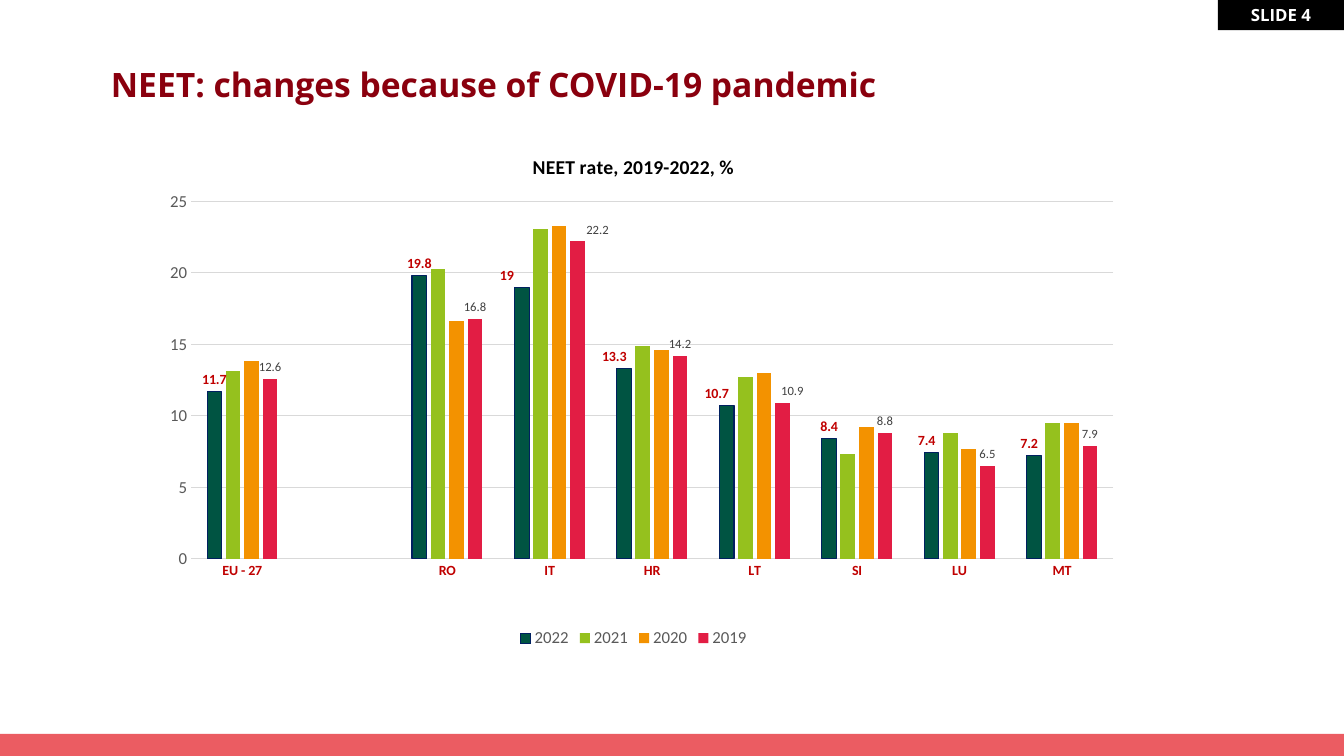
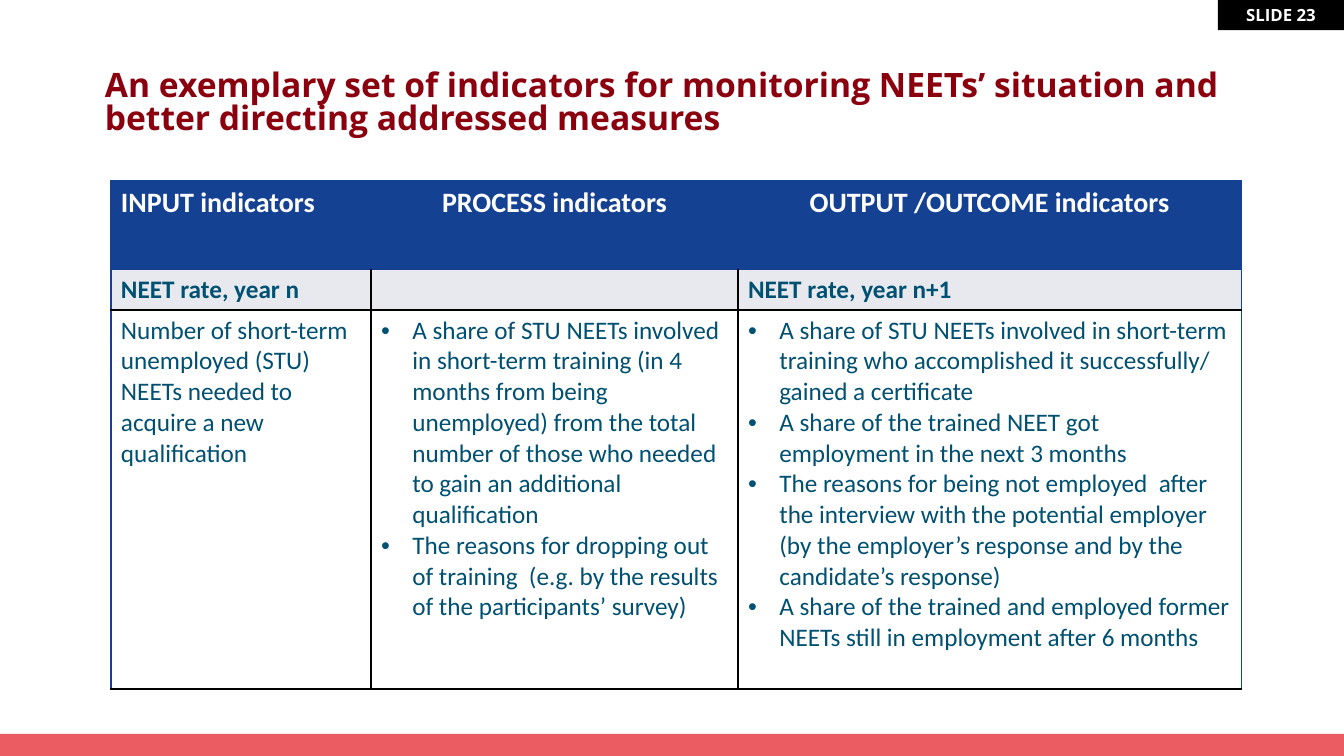
import dataclasses
import typing

import lxml.etree
import pptx
import pptx.chart.data
import pptx.dml.color
import pptx.enum.chart
import pptx.enum.shapes
import pptx.enum.text
import pptx.oxml.ns
import pptx.util

Inches = pptx.util.Inches
qn = pptx.oxml.ns.qn
Align = pptx.enum.text.PP_ALIGN


@dataclasses.dataclass(frozen=True)
class Theme:
    head: str = "Open Sans"
    body: str = "Calibri"
    white: str = "FFFFFF"
    black: str = "000000"
    band: str = "EB5C62"
    title: str = "8A000E"
    blue: str = "154193"
    pale: str = "E8E9EE"
    text: str = "005072"
    red: str = "C00000"
    grid: str = "D9D9D9"
    grey: str = "595959"
    dark: str = "404040"
    navy: str = "002060"
    big: int = 24
    header: int = 20
    cell: int = 18
    chart: int = 14
    small: int = 12
    label: int = 10
    tiny: int = 9


THEME = Theme()


@dataclasses.dataclass(frozen=True)
class Head:
    text: str
    number: int
    left: float
    top: float
    height: float
    space: float


@dataclasses.dataclass(frozen=True)
class Tag:
    size: int
    color: str
    bold: bool
    shifts: dict[int, float]


@dataclasses.dataclass(frozen=True)
class Series:
    name: str
    color: str
    values: tuple[float | None, ...]
    edge: str | None = None
    tag: Tag | None = None


@dataclasses.dataclass(frozen=True)
class Row:
    height: float
    fill: str
    color: str
    size: int
    bold: bool
    cells: tuple[tuple[str, ...], ...]
    aligns: tuple[typing.Any, ...] = (Align.LEFT,) * 3


CATS = ("EU - 27", "", "RO", "IT", "HR", "LT", "SI", "LU", "MT")
SERIES = (
    Series("2022", "005442", (11.7, None, 19.8, 19, 13.3, 10.7, 8.4, 7.4, 7.2), THEME.navy,
           Tag(THEME.label, THEME.red, True,
               {3: -0.015, 4: -0.01, 5: -0.01, 7: -0.005, 8: -0.005})),
    Series("2021", "95C11E", (13.1, None, 20.3, 23.1, 14.9, 12.7, 7.3, 8.8, 9.5)),
    Series("2020", "F39200", (13.8, None, 16.6, 23.3, 14.6, 13, 9.2, 7.7, 9.5)),
    Series("2019", "E21D44", (12.6, None, 16.8, 22.2, 14.2, 10.9, 8.8, 6.5, 7.9), None,
           Tag(THEME.tiny, THEME.dark, False, {3: 0.02, 5: 0.01})),
)

WIDTHS = (2.58, 3.64, 4.99)
ROWS = (
    Row(0.88, THEME.blue, THEME.white, THEME.header, True,
        (("INPUT indicators",), ("PROCESS indicators",), ("OUTPUT /OUTCOME indicators",)),
        (Align.LEFT, Align.CENTER, Align.CENTER)),
    Row(0.4, THEME.pale, THEME.text, THEME.cell, True,
        (("NEET rate, year n",), (), ("NEET rate, year n+1",))),
    Row(3.76, THEME.white, THEME.text, THEME.cell, False, (
        ("Number of short-term unemployed (STU) NEETs needed to acquire a new qualification",),
        ("A share of STU NEETs involved in short-term training (in 4 months from being "
         "unemployed) from the total number of those who needed to gain an additional "
         "qualification",
         "The reasons for dropping out of training  (e.g. by the results of the "
         "participants’ survey)"),
        ("A share of STU NEETs involved in short-term training who accomplished it "
         "successfully/ gained a certificate",
         "A share of the trained NEET got employment in the next 3 months",
         "The reasons for being not employed  after the interview with the potential "
         "employer (by the employer’s response and by the candidate’s response)",
         "A share of the trained and employed former NEETs still in employment after "
         "6 months"))),
)


def rgb(color: str) -> pptx.dml.color.RGBColor:
    return pptx.dml.color.RGBColor.from_string(color)


def style(font: typing.Any, size: int, color: str, bold: bool = False,
          face: str = THEME.body) -> None:
    font.name = face
    font.size = pptx.util.Pt(size)
    font.bold = bold
    font.color.rgb = rgb(color)


def box(slide: typing.Any, left: float, top: float, width: float, height: float,
        color: str) -> typing.Any:
    shape = slide.shapes.add_shape(pptx.enum.shapes.MSO_SHAPE.RECTANGLE, Inches(left),
                                   Inches(top), Inches(width), Inches(height))
    shape.shadow.inherit = False
    shape.fill.solid()
    shape.fill.fore_color.rgb = rgb(color)
    shape.line.fill.background()
    return shape


def add_page(deck: typing.Any, head: Head) -> typing.Any:
    slide = deck.slides.add_slide(deck.slide_layouts[5])
    box(slide, 0, 7.28, 13.33, 0.22, THEME.band)
    badge = box(slide, 12.08, 0, 1.25, 0.3, THEME.black)
    frame = badge.text_frame
    frame.margin_top = frame.margin_bottom = 0
    frame.vertical_anchor = pptx.enum.text.MSO_ANCHOR.MIDDLE
    frame.text = f"SLIDE {head.number}"
    frame.paragraphs[0].alignment = Align.CENTER
    style(frame.paragraphs[0].runs[0].font, THEME.small, THEME.white, True, THEME.head)

    title = slide.shapes.title
    title.left, title.top = Inches(head.left), Inches(head.top)
    title.width, title.height = Inches(11.51), Inches(head.height)
    frame = title.text_frame
    frame.text = head.text
    frame.word_wrap = True
    frame.auto_size = pptx.enum.text.MSO_AUTO_SIZE.NONE
    frame.vertical_anchor = pptx.enum.text.MSO_ANCHOR.TOP
    line = frame.paragraphs[0]
    line.alignment = Align.LEFT
    line.line_spacing = head.space
    style(line.runs[0].font, THEME.big, THEME.title, True, THEME.head)
    return slide


def place(parent: typing.Any, index: int, **parts: typing.Any) -> None:
    for old in parent.findall(qn("c:layout")):
        parent.remove(old)
    layout = lxml.etree.Element(qn("c:layout"))
    manual = lxml.etree.SubElement(layout, qn("c:manualLayout"))
    for name, value in parts.items():
        lxml.etree.SubElement(manual, qn(f"c:{name}"), val=str(value))
    parent.insert(index, layout)


def add_tags(series: typing.Any, tag: Tag) -> None:
    spot = pptx.enum.chart.XL_LABEL_POSITION.OUTSIDE_END
    labels = series.data_labels
    labels.show_value = True
    labels.position = spot
    style(labels.font, tag.size, tag.color, tag.bold)
    for index in tag.shifts:
        label = series.points[index].data_label
        label.position = spot
        style(label.font, tag.size, tag.color, tag.bold)
    for item in series._element.iter(qn("c:dLbl")):
        index = int(item.find(qn("c:idx")).get("val"))
        place(item, 1, x=tag.shifts[index], y=0)


def add_rates(slide: typing.Any) -> None:
    data = pptx.chart.data.CategoryChartData()
    data.categories = CATS
    for item in SERIES:
        data.add_series(item.name, item.values)
    chart = slide.shapes.add_chart(
        pptx.enum.chart.XL_CHART_TYPE.COLUMN_CLUSTERED,
        Inches(1.33), Inches(1.33), Inches(9.91), Inches(5.14), data).chart
    style(chart.font, THEME.label, THEME.black)

    chart.has_title = True
    frame = chart.chart_title.text_frame
    frame.text = "NEET rate, 2019-2022, %"
    style(frame.paragraphs[0].runs[0].font, THEME.chart, THEME.black, True)
    chart.chart_title.include_in_layout = False
    chart.has_legend = True
    chart.legend.position = pptx.enum.chart.XL_LEGEND_POSITION.BOTTOM
    chart.legend.include_in_layout = False
    style(chart.legend.font, THEME.small, THEME.grey)

    cats, rates = chart.category_axis, chart.value_axis
    style(cats.tick_labels.font, THEME.label, THEME.red, True)
    style(rates.tick_labels.font, THEME.small, THEME.grey)
    for axis in (cats, rates):
        axis.major_tick_mark = axis.minor_tick_mark = pptx.enum.chart.XL_TICK_MARK.NONE
    rates.has_major_gridlines = True
    for line in (cats.format.line, rates.major_gridlines.format.line):
        line.color.rgb = rgb(THEME.grid)
        line.width = pptx.util.Pt(0.75)
    rates.format.line.fill.background()
    rates.minimum_scale, rates.maximum_scale, rates.major_unit = 0, 25, 5
    rates.tick_labels.number_format = "0"
    rates.tick_labels.number_format_is_linked = False

    plot = chart.plots[0]
    plot.gap_width, plot.overlap = 219, -27
    plot.vary_by_categories = False
    for item, bars in zip(SERIES, plot.series):
        bars.format.fill.solid()
        bars.format.fill.fore_color.rgb = rgb(item.color)
        if item.edge:
            bars.format.line.color.rgb = rgb(item.edge)
            bars.format.line.width = pptx.util.Pt(0.75)
        if item.tag:
            add_tags(bars, item.tag)
    area = chart._chartSpace.find(f".//{qn('c:plotArea')}")
    place(area, 0, layoutTarget="inner", xMode="edge", yMode="edge",
          x=0.057, y=0.13, w=0.923, h=0.69)


def add_edges(cell: typing.Any, row: int, col: int) -> None:
    sides = {
        "L": row == 0 or col == 0,
        "R": row == 0 or col == len(WIDTHS) - 1,
        "T": row <= 1,
        "B": row == 0,
    }
    props = cell._tc.get_or_add_tcPr()
    for side, blue in sides.items():
        line = lxml.etree.SubElement(props, qn(f"a:ln{side}"), w=str(pptx.util.Pt(1)))
        fill = lxml.etree.SubElement(line, qn("a:solidFill"))
        lxml.etree.SubElement(fill, qn("a:srgbClr"), val=THEME.blue if blue else THEME.black)


def add_bullet(line: typing.Any) -> None:
    props = line._p.get_or_add_pPr()
    props.set("marL", str(Inches(0.31)))
    props.set("indent", str(-Inches(0.31)))
    lxml.etree.SubElement(props, qn("a:buFont"), typeface="Arial")
    lxml.etree.SubElement(props, qn("a:buChar"), char="•")


def fill_cell(cell: typing.Any, row: Row, lines: tuple[str, ...], align: typing.Any) -> None:
    cell.fill.solid()
    cell.fill.fore_color.rgb = rgb(row.fill)
    frame = cell.text_frame
    for index, text in enumerate(lines):
        line = frame.add_paragraph() if index else frame.paragraphs[0]
        line.text = text
        line.alignment = align
        if len(lines) > 1:
            add_bullet(line)
        style(line.runs[0].font, row.size, row.color, row.bold)


def add_grid(slide: typing.Any) -> None:
    height = sum(row.height for row in ROWS)
    table = slide.shapes.add_table(len(ROWS), len(WIDTHS), Inches(1.1), Inches(1.79),
                                   Inches(sum(WIDTHS)), Inches(height)).table
    table.first_row = table.horz_banding = False
    for col, width in enumerate(WIDTHS):
        table.columns[col].width = Inches(width)
    for index, row in enumerate(ROWS):
        table.rows[index].height = Inches(row.height)
        for col, lines in enumerate(row.cells):
            cell = table.cell(index, col)
            add_edges(cell, index, col)
            fill_cell(cell, row, lines, row.aligns[col])


def main() -> None:
    deck = pptx.Presentation()
    deck.slide_width, deck.slide_height = Inches(13.33), Inches(7.5)
    add_rates(add_page(deck, Head(
        "NEET: changes because of COVID-19 pandemic", 4, 1, 0.56, 0.55, 1.07)))
    add_grid(add_page(deck, Head(
        "An exemplary set of indicators for monitoring NEETs’ situation and better "
        "directing addressed measures", 23, 0.94, 0.66, 0.92, 0.81)))
    deck.save("out.pptx")


if __name__ == "__main__":
    main()
